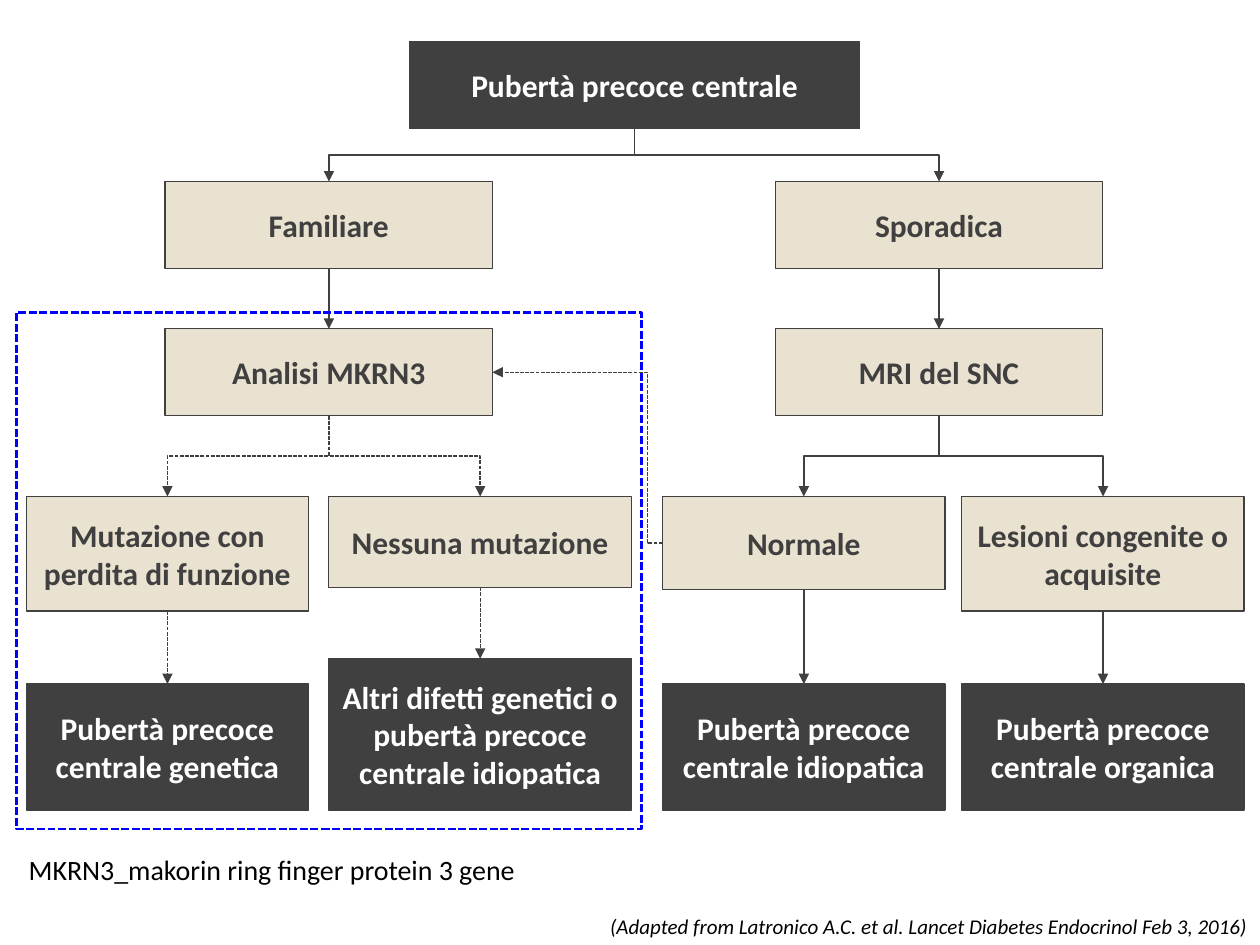
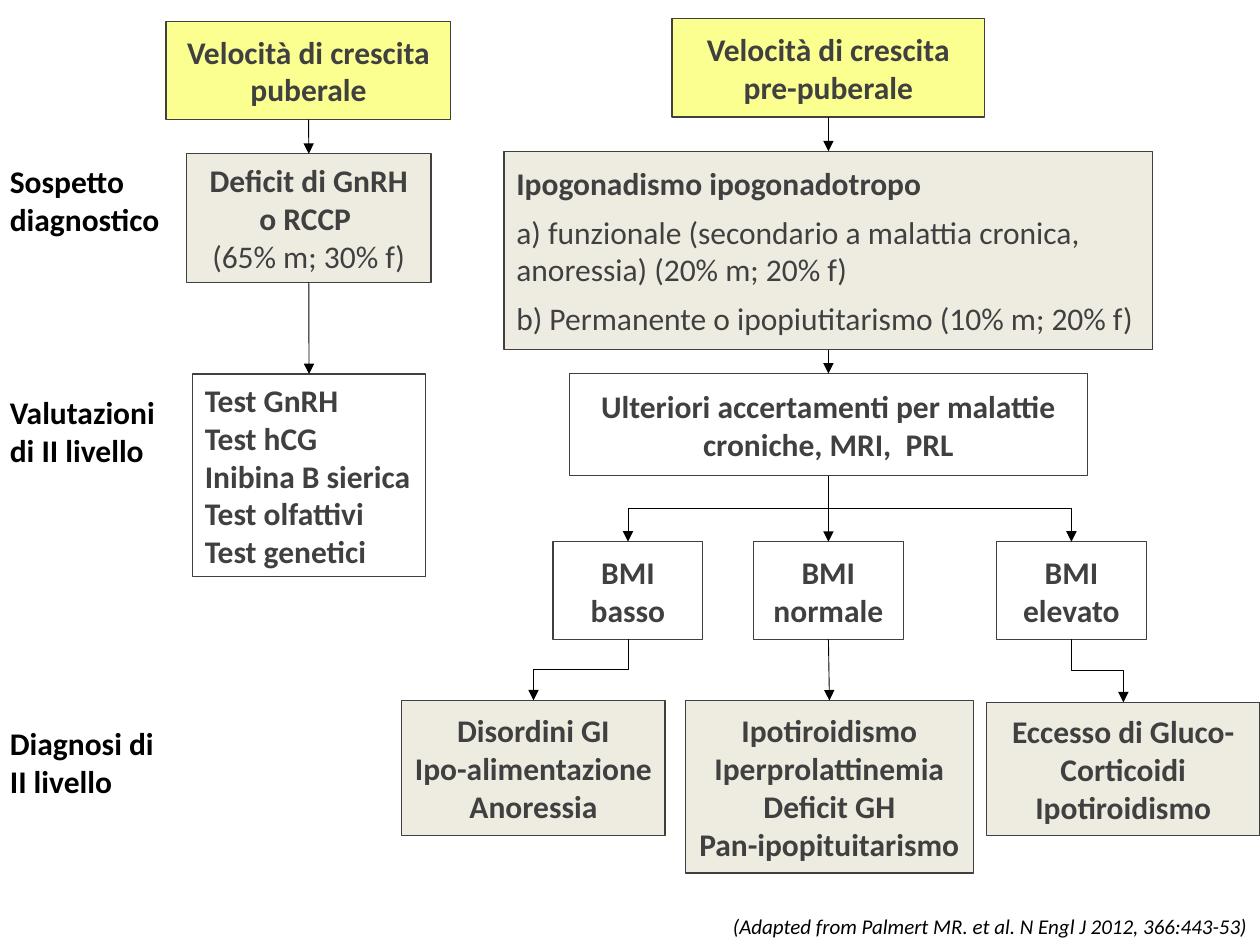
from lxml import etree
from pptx import Presentation, util as u
from pptx.dml.color import RGBColor
from pptx.enum import dml, shapes, text
from pptx.oxml import ns

# Shared look
DARK, SAND, STONE, YELLOW = "404040", "EAE2D0", "EEECE1", "FBFF90"
WHITE, BLACK, BLUE = "FFFFFF", "000000", "0000FF"
DASH = dml.MSO_LINE.SQUARE_DOT
CENTER, LEFT, RIGHT = text.PP_ALIGN.CENTER, text.PP_ALIGN.LEFT, text.PP_ALIGN.RIGHT
TOP_SIDE, LEFT_SIDE, BOTTOM_SIDE, RIGHT_SIDE = range(4)
BOLD = {"name": "Calibri", "size": u.Pt(18), "bold": True}
PLAIN = {**BOLD, "bold": False}
NOTE = {**PLAIN, "size": u.Pt(16)}
CITATION = {**PLAIN, "size": u.Pt(12), "italic": True}


def rgb(hex_code):
    return RGBColor.from_string(hex_code)


def style_line(line, color, width, dash=None):
    line.color.rgb = rgb(color)
    line.width = u.Pt(width)
    if dash:
        line.dash_style = dash


def write(tf, lines, formats, color, align=CENTER, after=0):
    """One paragraph per line; the last format serves all remaining lines."""
    for i, line in enumerate(lines):
        p = tf.paragraphs[0] if i == 0 else tf.add_paragraph()
        p.alignment = align
        p.space_after = u.Pt(after)
        r = p.add_run()
        r.text = line
        for key, value in formats[min(i, len(formats) - 1)].items():
            setattr(r.font, key, value)
        r.font.color.rgb = rgb(color)


def add_frame(s, at, fill=None, color=DARK, width=0.75, dash=None):
    sp = s.shapes.add_shape(shapes.MSO_SHAPE.RECTANGLE, *map(u.Cm, at))
    sp.shadow.inherit = False
    if fill:
        sp.fill.solid()
        sp.fill.fore_color.rgb = rgb(fill)
    else:
        sp.fill.background()
    style_line(sp.line, color, width, dash)
    return sp


def add_box(s, at, lines, fill=None, formats=(BOLD,), align=CENTER, after=0):
    sp = add_frame(s, at, fill)
    tf = sp.text_frame
    tf.word_wrap = True
    tf.vertical_anchor = text.MSO_ANCHOR.MIDDLE
    write(tf, lines, formats, WHITE if fill == DARK else DARK, align, after)
    return sp


def add_label(s, at, line, fmt, align=LEFT, wrap=False):
    tf = s.shapes.add_textbox(*map(u.Cm, at)).text_frame
    tf.word_wrap = wrap
    tf.auto_size = text.MSO_AUTO_SIZE.SHAPE_TO_FIT_TEXT
    write(tf, [line], [fmt], BLACK, align)


def add_citation(s, line, width):
    add_label(s, (25.4 - width, 18.29, width, 0.76), line, CITATION, RIGHT)


def turn_downwards(c, x1, y1, x2, y2):
    """Rotate an elbow so that it leaves and arrives vertically."""
    xfrm = c.element.spPr.find(ns.qn("a:xfrm"))
    for key in ("flipH", "flipV"):
        xfrm.attrib.pop(key, None)
    c.width, c.height = y2 - y1, abs(x2 - x1)
    c.left = (x1 + x2 - c.width) // 2
    c.top = (y1 + y2 - c.height) // 2
    xfrm.set("rot", "5400000" if x2 < x1 else "16200000")
    if x2 > x1:
        xfrm.set("flipH", "1")


def link(s, a, b, color=DARK, width=0.75, dash=None, sides=(BOTTOM_SIDE, TOP_SIDE), bend=None):
    """Arrow from a to b: straight when they are aligned, else an elbow."""
    x1, x2 = a.left + a.width // 2, b.left + b.width // 2
    y1, y2 = a.top + a.height, b.top
    straight = abs(x2 - x1) < u.Cm(0.2)
    kind = shapes.MSO_CONNECTOR.STRAIGHT if straight else shapes.MSO_CONNECTOR.ELBOW
    c = s.shapes.add_connector(kind, x1, y1, x2, y2)
    c.begin_connect(a, sides[0])
    c.end_connect(b, sides[1])
    if not straight and sides[0] == BOTTOM_SIDE:
        turn_downwards(c, x1, y1, x2, y2)
    if bend is not None:
        etree.SubElement(c.element.xpath(".//a:avLst")[0], ns.qn("a:gd"),
                         name="adj1", fmla=f"val {bend}")
    style_line(c.line, color, width, dash)
    etree.SubElement(c.line._get_or_add_ln(), ns.qn("a:tailEnd"), type="triangle")
    etree.SubElement(c.element.spPr, ns.qn("a:effectLst"))


def central_puberty(s):
    # Decision boxes
    root = add_box(s, (8.26, 0.84, 9.07, 1.75), ["Pubertà precoce centrale"], DARK)
    familial, sporadic, analysis, mri = [
        add_box(s, (x, y, 6.6, 1.75), [line], SAND) for x, y, line in (
            (3.33, 3.66, "Familiare"), (15.63, 3.66, "Sporadica"),
            (3.33, 6.63, "Analisi MKRN3"), (15.63, 6.63, "MRI del SNC"))]

    # Findings, each with its diagnosis below
    columns = (
        (0.53, 5.69, 2.31, "Mutazione con perdita di funzione",
         2.54, "Pubertà precoce centrale genetica"),
        (6.63, 6.1, 1.83, "Nessuna mutazione",
         3.05, "Altri difetti genetici o pubertà precoce centrale idiopatica"),
        (13.36, 5.69, 1.88, "Normale", 2.54, "Pubertà precoce centrale idiopatica"),
        (19.39, 5.69, 2.31, "Lesioni congenite o acquisite",
         2.54, "Pubertà precoce centrale organica"))
    findings = []
    for i, (x, w, h, finding, diagnosis_h, diagnosis) in enumerate(columns):
        test, dash = (analysis, DASH) if i < 2 else (mri, None)
        sp = add_box(s, (x, 10.01, w, h), [finding], SAND)
        end = add_box(s, (x, 16.33 - diagnosis_h, w, diagnosis_h), [diagnosis], DARK)
        link(s, test, sp, dash=dash)
        link(s, sp, end, dash=dash)
        findings.append(sp)

    # Remaining arrows
    for branch, test in ((familial, analysis), (sporadic, mri)):
        link(s, root, branch)
        link(s, branch, test)
    link(s, findings[2], analysis, dash=DASH, sides=(LEFT_SIDE, RIGHT_SIDE), bend=9100)

    # Genetic testing frame and notes
    add_frame(s, (0.33, 6.3, 12.6, 10.41), color=BLUE, width=1.5, dash=DASH)
    add_label(s, (0.33, 17.07, 10.49, 0.94), "MKRN3_makorin ring finger protein 3 gene", NOTE)
    add_citation(s, "(Adapted from Latronico A.C. et al. Lancet Diabetes Endocrinol Feb 3, 2016)", 13.49)


def growth_velocity(s):
    # Row labels
    for y, line in ((3.15, "Sospetto diagnostico"), (7.8, "Valutazioni di II livello"),
                    (14.48, "Diagnosi di II livello")):
        add_label(s, (-0.05, y, 3.63, 1.8), line, BOLD, wrap=True)

    # Pubertal velocity
    pubertal = add_box(s, (3.35, 0.43, 5.74, 1.98), ["Velocità di crescita puberale"], YELLOW)
    deficit = add_box(s, (3.76, 3.1, 4.93, 2.59), ["Deficit di GnRH o RCCP ", "(65% m; 30% f)"],
                      STONE, (BOLD, PLAIN))
    tests = add_box(s, (3.88, 7.54, 4.7, 4.09),
                    ["Test GnRH", "Test hCG", "Inibina B sierica", "Test olfattivi", "Test genetici"],
                    align=LEFT)

    # Pre-pubertal velocity
    prepubertal = add_box(s, (13.55, 0.38, 6.3, 1.98), ["Velocità di crescita pre-puberale"], YELLOW)
    hypogonadism = add_box(s, (10.16, 3.05, 13.08, 4),
                           ["Ipogonadismo ipogonadotropo",
                            "a) funzionale (secondario a malattia cronica, anoressia) (20% m; 20% f)",
                            "b) Permanente o ipopiutitarismo (10% m; 20% f)"],
                           STONE, (BOLD, PLAIN), LEFT, 6)
    workup = add_box(s, (11.48, 7.53, 10.44, 2.06),
                     ["Ulteriori accertamenti per malattie croniche, MRI,  PRL"])
    chain = [(pubertal, deficit), (deficit, tests),
             (prepubertal, hypogonadism), (hypogonadism, workup)]

    # BMI branches with their diagnoses
    branches = (
        (11.15, "BMI basso", (8.1, 14.12, 5.31, 2.72),
         ["Disordini GI", "Ipo-alimentazione", "Anoressia"]),
        (15.19, "BMI normale", (13.82, 14.12, 5.8, 3.48),
         ["Ipotiroidismo", "Iperprolattinemia", "Deficit GH", "Pan-ipopituitarismo"]),
        (20.09, "BMI elevato", (19.89, 14.16, 5.51, 2.69),
         ["Eccesso di Gluco-Corticoidi", "Ipotiroidismo"]))
    for x, bmi, at, lines in branches:
        sp = add_box(s, (x, 10.92, 3.02, 1.97), [bmi])
        chain += [(workup, sp), (sp, add_box(s, at, lines, STONE))]

    for a, b in chain:
        link(s, a, b, BLACK, 0.5)
    add_citation(s, "(Adapted from Palmert MR. et al. N Engl J 2012, 366:443-53)", 11.1)


def main():
    prs = Presentation()
    prs.slide_width, prs.slide_height = u.Cm(25.4), u.Cm(19.05)
    for build in (central_puberty, growth_velocity):
        build(prs.slides.add_slide(prs.slide_layouts[6]))
    prs.save("out.pptx")


if __name__ == "__main__":
    main()
